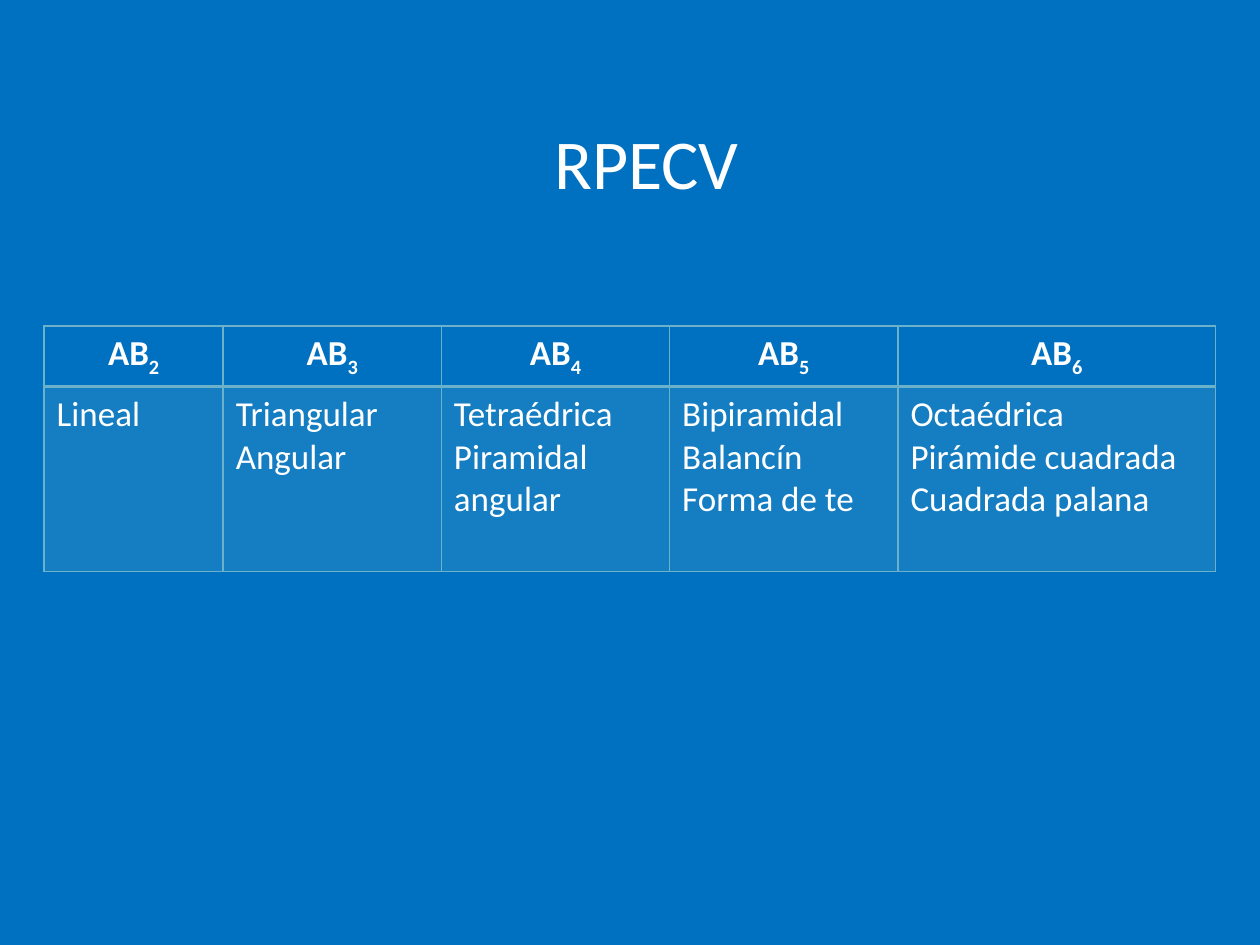
from dataclasses import dataclass

from lxml import etree
from pptx import Presentation
from pptx import util as u
from pptx.dml.color import RGBColor
from pptx.enum import text
from pptx.oxml import ns


@dataclass(frozen=True)
class Theme:
    font: str = "Calibri"
    background: RGBColor = RGBColor(0x00, 0x70, 0xC0)
    ink: RGBColor = RGBColor(0xFF, 0xFF, 0xFF)
    accent: RGBColor = RGBColor(0x6B, 0xB1, 0xC9)
    tint: int = 20
    title_size: int = 40
    table_size: int = 20


THEME = Theme()
WIDTH, HEIGHT = u.Inches(10), u.Inches(7.5)
COLUMN_SHARES = (1.42, 1.73, 1.81, 1.81, 2.52)
ROW_SHARES = (0.48, 1.47)
GEOMETRIES = {
    "2": ["Lineal"],
    "3": ["Triangular", "Angular"],
    "4": ["Tetraédrica", "Piramidal", "angular"],
    "5": ["Bipiramidal", "Balancín", "Forma de te"],
    "6": ["Octaédrica", "Pirámide cuadrada", "Cuadrada palana"],
}


def share_box(left, top, width, height):
    return (round(left * WIDTH), round(top * HEIGHT),
            round(width * WIDTH), round(height * HEIGHT))


def set_font(paragraph, size, bold=False):
    font = paragraph.font
    font.name, font.size, font.bold = THEME.font, u.Pt(size), bold
    font.color.rgb = THEME.ink


def set_borders(cell, bottom=1):
    properties = cell._tc.get_or_add_tcPr()
    for side, points in (("L", 1), ("R", 1), ("T", 1), ("B", bottom)):
        line = etree.SubElement(properties, ns.qn(f"a:ln{side}"), w=str(u.Pt(points)))
        fill = etree.SubElement(line, ns.qn("a:solidFill"))
        etree.SubElement(fill, ns.qn("a:srgbClr"), val=str(THEME.accent))


def fill_tint(cell):
    cell.fill.solid()
    cell.fill.fore_color.rgb = THEME.accent
    color = cell._tc.tcPr.find(f"{ns.qn('a:solidFill')}/{ns.qn('a:srgbClr')}")
    etree.SubElement(color, ns.qn("a:alpha"), val=str(THEME.tint * 1000))


def write_formula(cell, count):
    set_borders(cell, bottom=2)
    cell.fill.background()
    formula = cell.text_frame.paragraphs[0]
    formula.alignment = text.PP_ALIGN.CENTER
    set_font(formula, THEME.table_size, bold=True)
    formula.add_run().text = "AB"
    subscript = formula.add_run()
    subscript.text = count
    subscript.font._element.set("baseline", "-25000")


def write_shapes(cell, names):
    set_borders(cell)
    fill_tint(cell)
    cell.text_frame.text = "\n".join(names)
    for paragraph in cell.text_frame.paragraphs:
        set_font(paragraph, THEME.table_size)


def add_title(slide, box):
    title = slide.shapes.add_textbox(*box).text_frame
    title.word_wrap = True
    title.text = "RPECV"
    set_font(title.paragraphs[0], THEME.title_size)


def add_geometry_table(slide, box):
    width, height = box[2:]
    table = slide.shapes.add_table(len(ROW_SHARES), len(GEOMETRIES), *box).table
    table.first_row = table.horz_banding = False
    for column, share in zip(table.columns, COLUMN_SHARES):
        column.width = round(width * share / sum(COLUMN_SHARES))
    for row, share in zip(table.rows, ROW_SHARES):
        row.height = round(height * share / sum(ROW_SHARES))
    for index, (count, names) in enumerate(GEOMETRIES.items()):
        write_formula(table.cell(0, index), count)
        write_shapes(table.cell(1, index), names)


def main():
    presentation = Presentation()
    presentation.slide_width, presentation.slide_height = WIDTH, HEIGHT
    slide = presentation.slides.add_slide(presentation.slide_layouts[6])
    slide.background.fill.solid()
    slide.background.fill.fore_color.rgb = THEME.background
    add_geometry_table(slide, share_box(0.035, 0.345, 0.93, 0.26))
    add_title(slide, share_box(0.43, 0.12, 0.17, 0.1))
    presentation.save("out.pptx")


if __name__ == "__main__":
    main()
